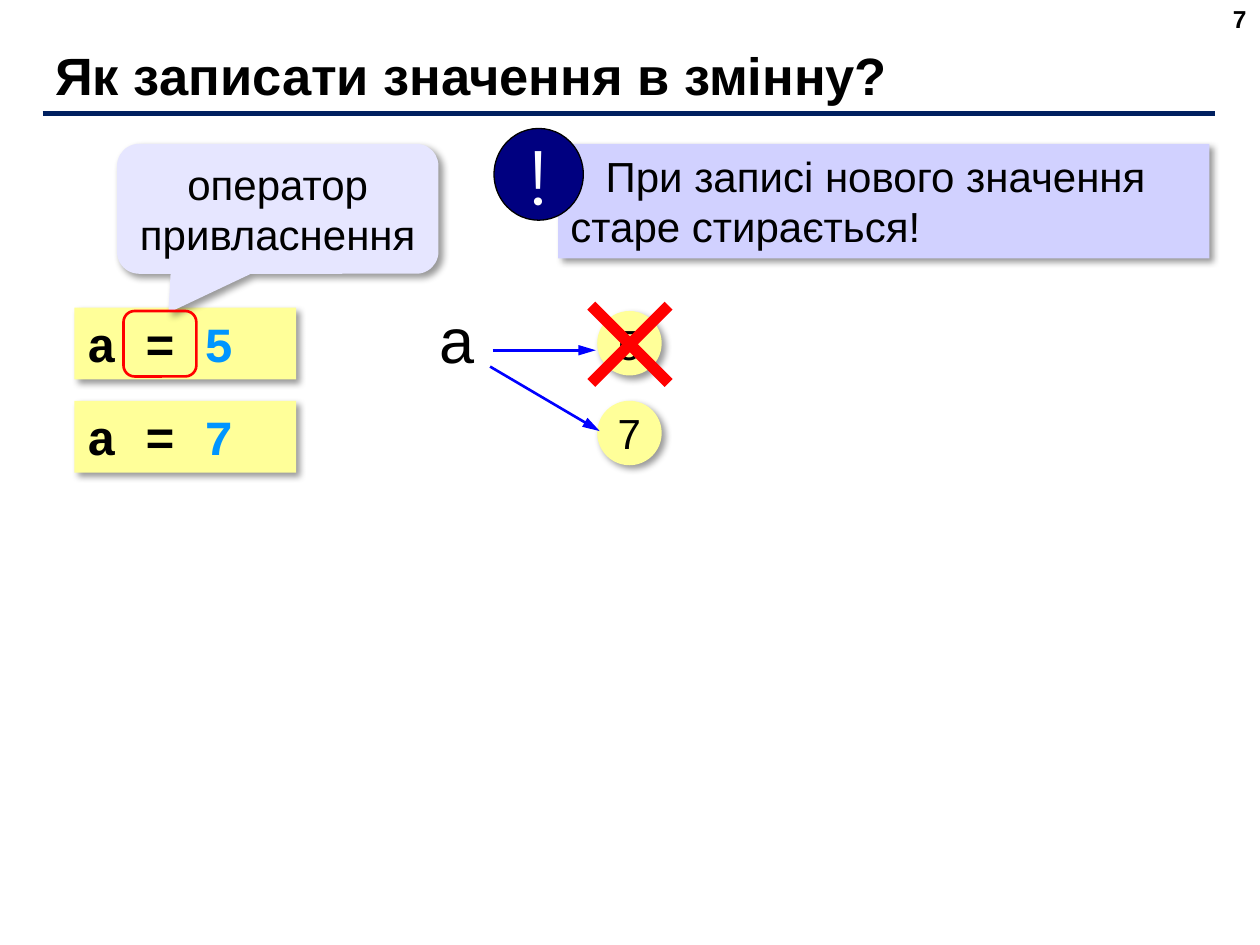
from lxml.etree import SubElement
from pptx import Presentation
from pptx.dml.color import RGBColor
from pptx.enum.shapes import MSO_CONNECTOR, MSO_SHAPE
from pptx.enum.text import MSO_ANCHOR, MSO_AUTO_SIZE, PP_ALIGN
from pptx.oxml.ns import qn
from pptx.util import Cm, Pt

TITLE = "Як записати значення в змінну?"
PAGE_NUMBER = "7"
CALLOUT = "оператор привласнення"
NOTE = "При записі нового значення старе стирається!"
VARIABLE = "a"
VALUES = ["5", "7"]
ROW_TOPS = [6.2, 8.08]
CIRCLE_TOPS = [6.27, 8.08]
ARROWS = [(9.93, 7.06, 12.01, 7.06), (9.88, 7.39, 12.09, 8.69)]

BLACK, WHITE, RED, BLUE = "000000", "FFFFFF", "FF0000", "0000FF"
YELLOW, VALUE_BLUE, NAVY, RULE_NAVY = "FFFF99", "0095FF", "000080", "002060"
CALLOUT_FILL, NOTE_FILL = "E6E6FF", "D1D1FF"


def paint(color_format, color):
    color_format.rgb = RGBColor.from_string(color)


def write(shape, *runs, size=24, font="Arial", bold=False, align=PP_ALIGN.LEFT,
          anchor=MSO_ANCHOR.MIDDLE, wrap=True, before=0, indent=0):
    frame = shape.text_frame
    frame.word_wrap = wrap
    frame.auto_size = MSO_AUTO_SIZE.NONE
    frame.vertical_anchor = anchor
    paragraph = frame.paragraphs[0]
    paragraph.alignment = align
    paragraph.space_before = Pt(before)
    if indent:
        paragraph._p.get_or_add_pPr().set("indent", str(Cm(indent)))
    for text, color in runs:
        run = paragraph.add_run()
        run.text = text
        run.font.name = font
        run.font.size = Pt(size)
        run.font.bold = bold
        paint(run.font.color, color)


def add_shadow(shape):
    effects = shape._element.spPr.find(qn("a:effectLst"))
    shadow = SubElement(effects, qn("a:outerShdw"), blurRad=str(Pt(4)), dist=str(Pt(3)),
                        dir="2700000", algn="tl", rotWithShape="0")
    color = SubElement(shadow, qn("a:srgbClr"), val=BLACK)
    SubElement(color, qn("a:alpha"), val="40000")


def add_block(slide, kind, box, fill=None, line=None, width=0.75, shadow=False, adjustments=()):
    shape = slide.shapes.add_shape(kind, *map(Cm, box))
    shape.shadow.inherit = False
    for index, value in enumerate(adjustments):
        shape.adjustments[index] = value
    if fill:
        shape.fill.solid()
        paint(shape.fill.fore_color, fill)
    else:
        shape.fill.background()
    if line:
        paint(shape.line.color, line)
        shape.line.width = Pt(width)
    else:
        shape.line.fill.background()
    if shadow:
        add_shadow(shape)
    return shape


def add_line(slide, ends, color, width, arrow=False):
    connector = slide.shapes.add_connector(MSO_CONNECTOR.STRAIGHT, *map(Cm, ends))
    paint(connector.line.color, color)
    connector.line.width = Pt(width)
    if arrow:
        SubElement(connector.line._get_or_add_ln(), qn("a:tailEnd"),
                   type="triangle", w="med", len="lg")
    SubElement(connector._element.spPr, qn("a:effectLst"))


def add_text(slide, box, text, **style):
    write(slide.shapes.add_textbox(*map(Cm, box)), (text, BLACK), **style)


def main():
    presentation = Presentation()
    presentation.slide_width, presentation.slide_height = Cm(25.4), Cm(19.05)
    slide = presentation.slides.add_slide(presentation.slide_layouts[5])

    title = slide.shapes.title
    title.left, title.top, title.width, title.height = map(Cm, (0.86, 0.84, 23.27, 1.32))
    write(title, (TITLE, BLACK), size=30, bold=True)
    add_line(slide, (0.86, 2.29, 24.49, 2.29), RULE_NAVY, 3)
    add_text(slide, (19.46, -0.05, 5.92, 1.32), PAGE_NUMBER, size=14, bold=True,
             align=PP_ALIGN.RIGHT, anchor=MSO_ANCHOR.TOP)

    for value, row_top, circle_top in zip(VALUES, ROW_TOPS, CIRCLE_TOPS):
        code = add_block(slide, MSO_SHAPE.RECTANGLE, (1.5, row_top, 4.47, 1.45),
                         YELLOW, shadow=True)
        write(code, ("a = ", BLACK), (value, VALUE_BLUE), size=28, font="Courier New",
              bold=True, anchor=MSO_ANCHOR.TOP, before=4)
        circle = add_block(slide, MSO_SHAPE.OVAL, (12.04, circle_top, 1.3, 1.3),
                           YELLOW, shadow=True)
        write(circle, (value, BLACK), align=PP_ALIGN.CENTER, wrap=False)

    callout = add_block(slide, MSO_SHAPE.ROUNDED_RECTANGULAR_CALLOUT, (2.36, 2.9, 6.48, 2.62),
                        CALLOUT_FILL, shadow=True, adjustments=(-0.34, 0.8, 0.17))
    write(callout, (CALLOUT, BLACK), align=PP_ALIGN.CENTER)
    add_block(slide, MSO_SHAPE.ROUNDED_RECTANGLE, (2.49, 6.27, 1.47, 1.32),
              line=RED, width=1.5, adjustments=(0.17,))

    note = add_block(slide, MSO_SHAPE.RECTANGLE, (11.25, 2.9, 13.13, 2.31),
                     NOTE_FILL, shadow=True)
    write(note, (NOTE, BLACK), anchor=MSO_ANCHOR.TOP, before=3, indent=0.71)
    mark = add_block(slide, MSO_SHAPE.OVAL, (9.96, 2.59, 1.8, 1.85), NAVY, line=BLACK)
    write(mark, ("!", WHITE), size=44, font="Montserrat", align=PP_ALIGN.CENTER, wrap=False)

    add_text(slide, (8.48, 6.07, 1.47, 1.52), VARIABLE, size=36,
             align=PP_ALIGN.CENTER, wrap=False)
    for ends in ARROWS:
        add_line(slide, ends, BLUE, 1.5, arrow=True)
    cross = add_block(slide, MSO_SHAPE.MATH_PLUS, (11.2, 5.44, 3, 3), RED, adjustments=(0.075,))
    cross.rotation = 315

    presentation.save("out.pptx")


if __name__ == "__main__":
    main()
